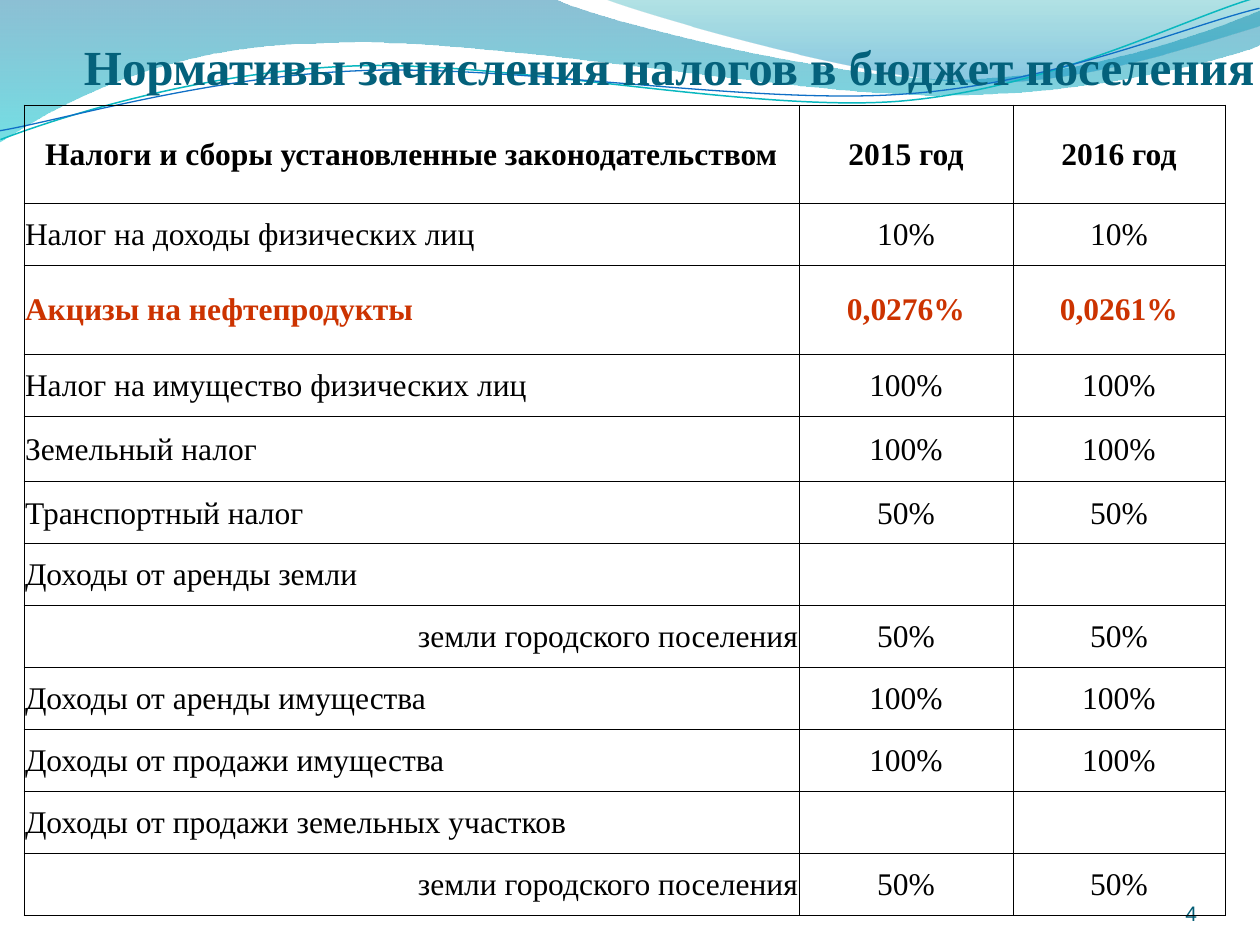
"""Slide with a table of tax shares credited to the settlement budget."""
from lxml.etree import SubElement
from pptx import Presentation
from pptx.dml.color import RGBColor
from pptx.enum.text import MSO_ANCHOR, MSO_AUTO_SIZE, PP_ALIGN
from pptx.oxml.ns import qn
from pptx.util import Pt

PX = 914400 / 126
HUES = {
    "title": "04617B", "number": "045D75", "text": "000000", "accent": "CC3300",
    "blue": "0074A1", "aqua": "00C6CF", "teal": "00A1A9", "sky": "008BBF",
    "upper": "0AB8BF", "lower": "0F6FC6",
}


def write(frame, text, size=18, font="Times New Roman", hue="text", bold=False,
          align=PP_ALIGN.LEFT):
    para = frame.paragraphs[0]
    para.alignment = align
    run = para.add_run()
    run.text = text
    run.font.size = Pt(size)
    run.font.name = font
    run.font.bold = bold
    run.font.color.rgb = RGBColor.from_string(HUES[hue])


def trace(start, steps, close):
    dots = [dot for step in steps for dot in zip(step[::2], step[1::2])]
    path = slide.shapes.build_freeform(*start, scale=PX)
    path.add_line_segments(dots, close=close)
    shape = path.convert_to_shape()
    shape.shadow.inherit = False
    nodes = iter(list(shape._element.iter(qn("a:lnTo"))))
    for step in steps:
        node = next(nodes)
        if len(step) == 6:
            bend = SubElement(node.getparent(), qn("a:cubicBezTo"))
            node.addprevious(bend)
            for part in (node, next(nodes), next(nodes)):
                bend.append(part[0])
                part.getparent().remove(part)
    return shape


deck = Presentation()
deck.slide_width, deck.slide_height = round(1260 * PX), round(945 * PX)
slide = deck.slides.add_slide(deck.slide_layouts[5])

waves = [
    ((0, -1), [(554, -1), (600, 21, 837, 79, 955, 79), (1075, 79, 1207, 33, 1260, 11),
               (1261, 45), (1239, 55, 1096, 96, 940, 95), (784, 95, 481, 35, 324, 43),
               (163, 44, 58, 105, -1, 142)],
     [(0, "blue", 45), (1, "aqua", 55)]),
    ((604, -1), [(641, 14, 859, 78, 969, 82), (1079, 87, 1211, 40, 1260, 26), (1260, 0)],
     [(0, "teal", 30), (0.8, "sky", 45)]),
]
for start, steps, stops in waves:
    wave = trace(start, steps, True)
    wave.line.fill.background()
    wave.fill.gradient()
    wave.fill.gradient_angle = 270
    for stop, (place, hue, alpha) in zip(wave.fill.gradient_stops, stops):
        stop.position = place
        stop.color.rgb = RGBColor.from_string(HUES[hue])
    for tint, (place, hue, alpha) in zip(wave._element.iter(qn("a:srgbClr")), stops):
        SubElement(tint, qn("a:alpha"), val=str(alpha * 1000))

lines = [
    ((-2, 110), [(59, 90, 200, 52, 350, 53), (499, 53, 745, 118, 896, 114),
                 (1049, 109, 1184, 45, 1260, 27)], "upper", 0.85),
    ((-2, 101), [(57, 94, 207, 57, 357, 58), (509, 58, 750, 111, 902, 107),
                 (1052, 104, 1188, 52, 1262, 38)], "lower", 0.75),
]
for start, steps, hue, width in lines:
    curve = trace(start, steps, False)
    curve.rotation = 357.3
    curve.fill.background()
    curve.line.color.rgb = RGBColor.from_string(HUES[hue])
    curve.line.width = Pt(width)

title = slide.shapes.title
slide.shapes._spTree.append(title._element)
number = slide.shapes.add_textbox(0, 0, 0, 0)
for box, place, top in ((title, (84, 0, 1176, 95), 6), (number, (1092, 876, 105, 50), 0)):
    box.left, box.top, box.width, box.height = (round(v * PX) for v in place)
    frame = box.text_frame
    frame.word_wrap = True
    frame.auto_size = MSO_AUTO_SIZE.NONE
    frame.vertical_anchor = MSO_ANCHOR.BOTTOM
    frame.margin_left = frame.margin_right = frame.margin_bottom = 0
    frame.margin_top = round(top * PX)
write(title.text_frame, "Нормативы зачисления налогов в бюджет поселения",
      size=28, hue="title", bold=True)
write(number.text_frame, "4", size=12, font="Arial", hue="number", align=PP_ALIGN.RIGHT)

rows = [
    ("Налоги и сборы установленные законодательством", "2015 год", "2016 год"),
    ("Налог на доходы физических лиц", "10%", "10%"),
    ("Акцизы на нефтепродукты", "0,0276%", "0,0261%"),
    ("Налог на имущество физических лиц", "100%", "100%"),
    ("Земельный налог", "100%", "100%"),
    ("Транспортный налог", "50%", "50%"),
    ("Доходы от аренды земли", "", ""),
    ("земли городского поселения", "50%", "50%"),
    ("Доходы от аренды имущества", "100%", "100%"),
    ("Доходы от продажи имущества", "100%", "100%"),
    ("Доходы от продажи земельных участков", "", ""),
    ("земли городского поселения", "50%", "50%"),
]
widths = [775, 214, 212]
heights = [98, 62, 89, 62, 66] + [62] * 7
place = (24, 105, sum(widths), sum(heights))
table = slide.shapes.add_table(len(rows), len(widths), *(round(v * PX) for v in place)).table
table.first_row = table.horz_banding = False
for col, width in zip(table.columns, widths):
    col.width = round(width * PX)
for r, (row, height) in enumerate(zip(rows, heights)):
    table.rows[r].height = round(height * PX)
    for c, text in enumerate(row):
        cell = table.cell(r, c)
        cell.vertical_anchor = MSO_ANCHOR.MIDDLE
        cell.margin_left = cell.margin_right = cell.margin_top = round(PX)
        cell.margin_bottom = 0
        for side in ("lnL", "lnR", "lnT", "lnB"):
            edge = SubElement(cell._tc.get_or_add_tcPr(), qn(f"a:{side}"), w=str(Pt(0.5)))
            fill = SubElement(edge, qn("a:solidFill"))
            SubElement(fill, qn("a:srgbClr"), val=HUES["text"])
        cell.fill.background()
        if not text:
            continue
        align = PP_ALIGN.JUSTIFY
        if r == 0 or c > 0:
            align = PP_ALIGN.CENTER
        elif text.startswith("земли"):
            align = PP_ALIGN.RIGHT
        write(cell.text_frame, text, hue="accent" if r == 2 else "text",
              bold=r in (0, 2), align=align)

deck.save("out.pptx")
